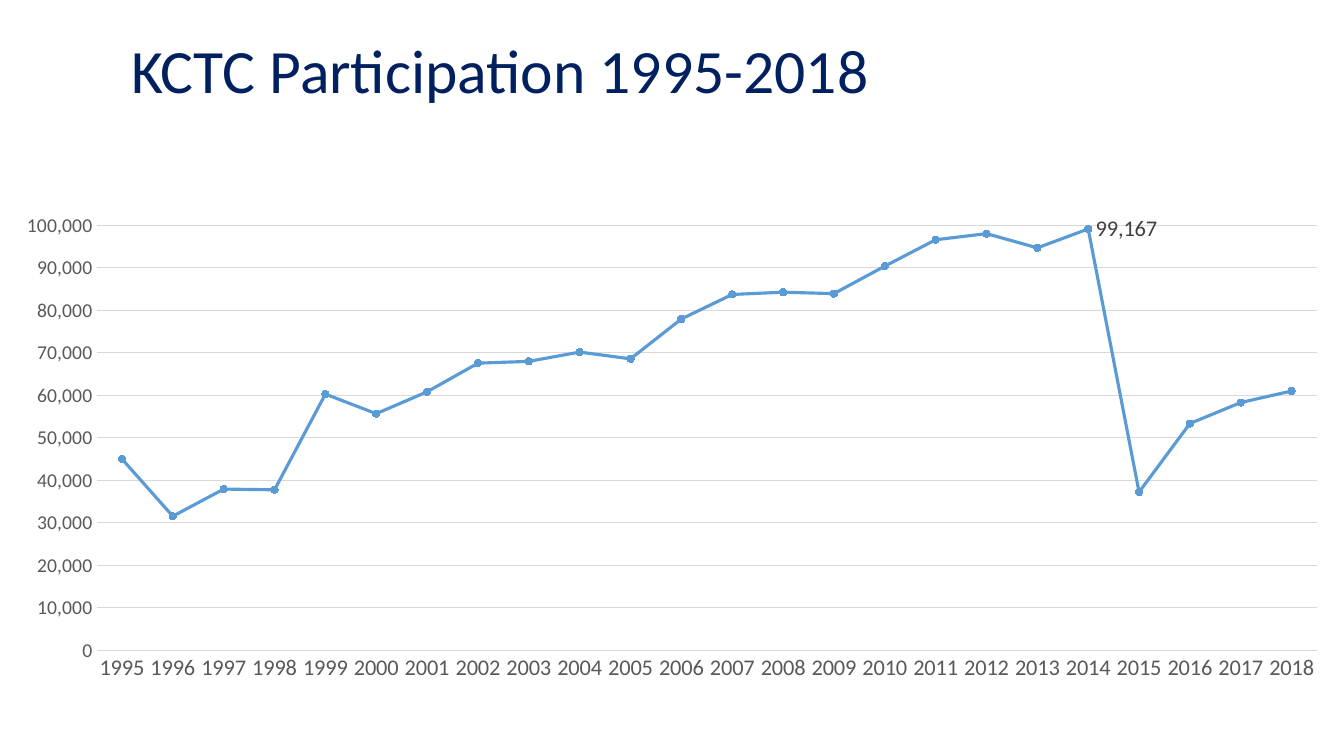
"""Build the KCTC participation slide with its line chart."""
from pptx import Presentation
from pptx.chart.data import CategoryChartData
from pptx.dml.color import RGBColor
from pptx.enum.chart import (XL_CHART_TYPE, XL_LABEL_POSITION,
                             XL_MARKER_STYLE, XL_TICK_MARK)
from pptx.enum.text import MSO_ANCHOR, PP_ALIGN
from pptx.util import Inches, Pt

LINE_MARKERS = XL_CHART_TYPE.LINE_MARKERS
LABEL_RIGHT = XL_LABEL_POSITION.RIGHT
CIRCLE = XL_MARKER_STYLE.CIRCLE
NO_TICK = XL_TICK_MARK.NONE
MIDDLE = MSO_ANCHOR.MIDDLE
LEFT = PP_ALIGN.LEFT

FONT = "Calibri"
TITLE_ONLY = 5
NUMBER_FORMAT = "#,##0"
COLORS = {"title": "002060", "text": "000000", "axis": "595959",
          "grid": "D9D9D9", "series": "5B9BD5", "label": "404040"}
FIRST_YEAR = 1995
PEAK_YEAR = 2014
PARTICIPANTS = [
    45045, 31567, 37960, 37787, 60310, 55700, 60851, 67586,
    68013, 70190, 68609, 77981, 83751, 84285, 83944, 90408,
    96620, 98060, 94709, 99167, 37250, 53390, 58324, 61046,
]


def color(name):
    return RGBColor.from_string(COLORS[name])


def style_font(font, size, color_name):
    font.name = FONT
    font.size = Pt(size)
    font.bold = False
    font.color.rgb = color(color_name)


def style_line(line, color_name, width):
    line.color.rgb = color(color_name)
    line.width = Pt(width)


def set_title(slide, text):
    title = slide.shapes.title
    title.left, title.top = Inches(1.2), Inches(0.31)
    title.width, title.height = Inches(11), Inches(0.84)
    title.text_frame.text = text
    title.text_frame.vertical_anchor = MIDDLE
    paragraph = title.text_frame.paragraphs[0]
    paragraph.alignment = LEFT
    paragraph.line_spacing = 0.9
    style_font(paragraph.font, 44, "title")


def style_axis(axis, size):
    axis.major_tick_mark = NO_TICK
    axis.minor_tick_mark = NO_TICK
    style_font(axis.tick_labels.font, size, "axis")


def style_series(series):
    series.smooth = False
    style_line(series.format.line, "series", 2.25)
    marker = series.marker
    marker.style = CIRCLE
    marker.size = 5
    marker.format.fill.solid()
    marker.format.fill.fore_color.rgb = color("series")
    style_line(marker.format.line, "series", 0.75)


def label_peak(series):
    series.data_labels.show_value = False
    label = series.points[PEAK_YEAR - FIRST_YEAR].data_label
    style_font(label.font, 16, "label")
    label.position = LABEL_RIGHT


def add_participation_chart(slide):
    data = CategoryChartData(number_format=NUMBER_FORMAT)
    data.categories = [str(FIRST_YEAR + i) for i in range(len(PARTICIPANTS))]
    data.add_series("Series 1", PARTICIPANTS)
    chart = slide.shapes.add_chart(
        LINE_MARKERS, Inches(0), Inches(2.02), Inches(13.33), Inches(4.84),
        data).chart
    chart.has_legend = False
    chart.has_title = False
    style_font(chart.font, 10, "text")
    chart.plots[0].vary_by_categories = False

    style_axis(chart.category_axis, 16)
    style_line(chart.category_axis.format.line, "grid", 0.75)

    value_axis = chart.value_axis
    style_axis(value_axis, 14)
    value_axis.format.line.fill.background()
    value_axis.minimum_scale = 0
    value_axis.maximum_scale = 100000
    value_axis.major_unit = 10000
    value_axis.tick_labels.number_format = NUMBER_FORMAT
    value_axis.tick_labels.number_format_is_linked = False
    style_line(value_axis.major_gridlines.format.line, "grid", 0.75)

    series = chart.plots[0].series[0]
    style_series(series)
    label_peak(series)


def main():
    presentation = Presentation()
    presentation.slide_width = Inches(13.33)
    presentation.slide_height = Inches(7.5)
    slide = presentation.slides.add_slide(
        presentation.slide_layouts[TITLE_ONLY])
    set_title(slide, "KCTC Participation 1995-2018")
    add_participation_chart(slide)
    presentation.save("out.pptx")


if __name__ == "__main__":
    main()
